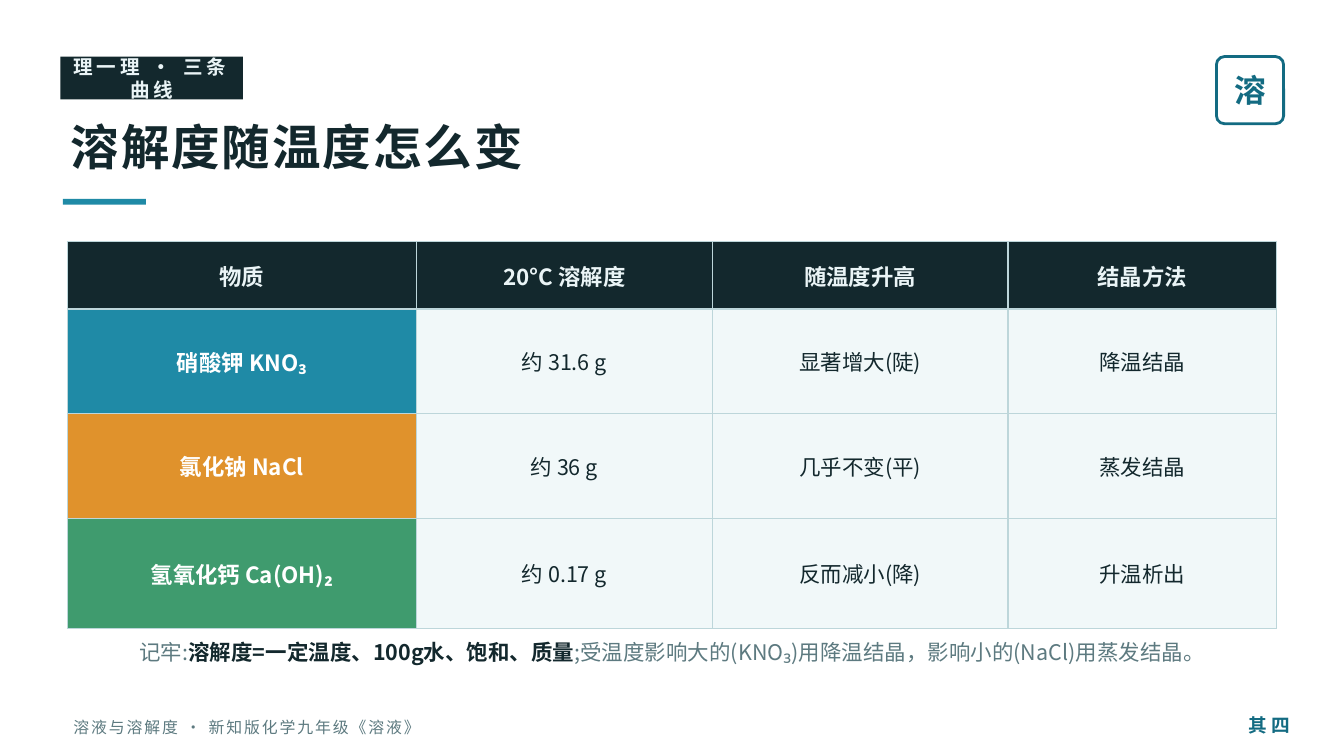
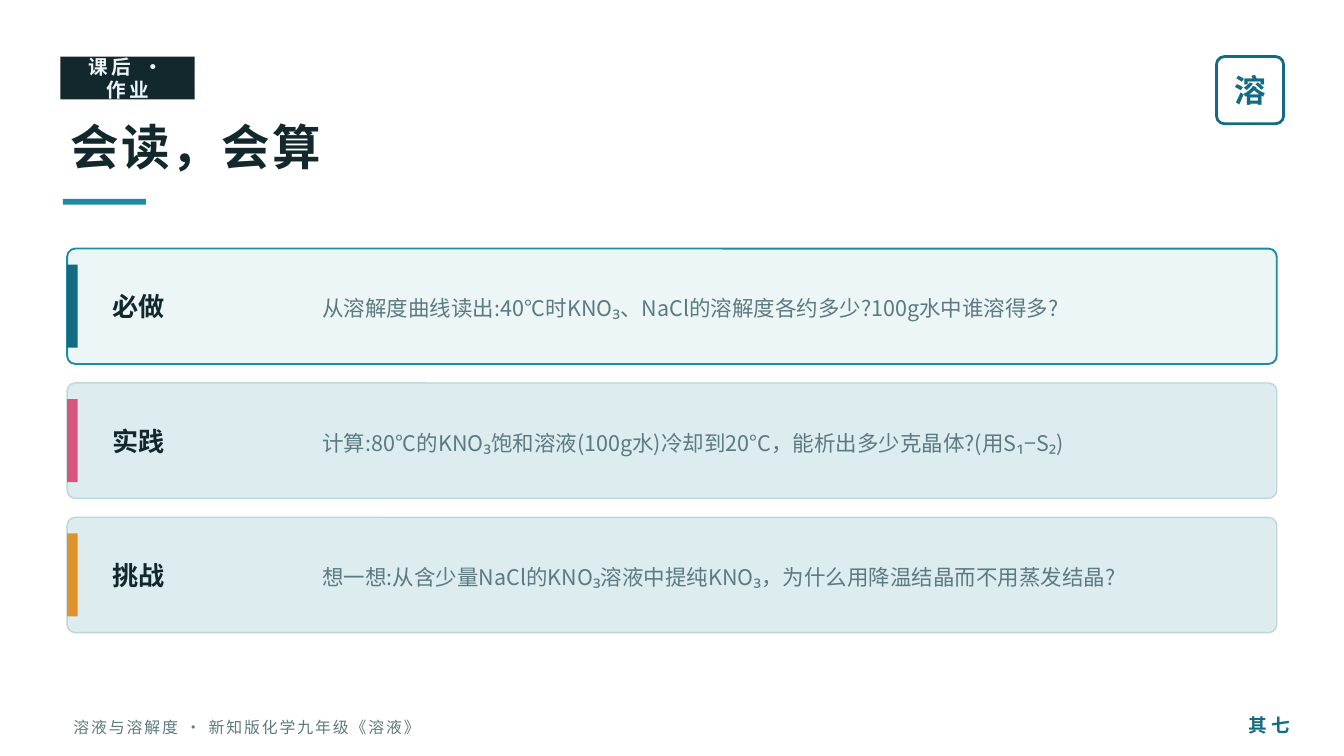
from lxml import etree
from pptx import Presentation
from pptx.dml.color import RGBColor
from pptx.enum.shapes import MSO_SHAPE
from pptx.enum.text import MSO_ANCHOR, PP_ALIGN
from pptx.oxml.ns import qn
from pptx.util import Cm, Pt

RECT, ROUND = MSO_SHAPE.RECTANGLE, MSO_SHAPE.ROUNDED_RECTANGLE
LEFT, CENTER, RIGHT = PP_ALIGN.LEFT, PP_ALIGN.CENTER, PP_ALIGN.RIGHT
MIDDLE = MSO_ANCHOR.MIDDLE

FONT = "Noto Sans CJK SC"
COLORS = {
    "ink": "13282D", "muted": "5D7A80", "pale": "EAF4F6", "white": "FFFFFF",
    "deep": "136B82", "teal": "1F8AA6", "orange": "E0922C", "green": "3F9B6E",
    "pink": "D6557F", "border": "BDD6DA", "cell": "F1F8F9",
    "card": "DCECEF", "card_first": "ECF6F7",
}

# Content
SEAL = "溶"
FOOTER = "溶液与溶解度 · 新知版化学九年级《溶液》"

CURVES = {"tag": "理一理 · 三条曲线", "tag_width": 3.45,
          "title": "溶解度随温度怎么变", "page": "其 四"}
TABLE_HEAD = ["物质", "20°C 溶解度", "随温度升高", "结晶方法"]
TABLE_ROWS = [
    ("teal", ["硝酸钾 KNO₃", "约 31.6 g", "显著增大(陡)", "降温结晶"]),
    ("orange", ["氯化钠 NaCl", "约 36 g", "几乎不变(平)", "蒸发结晶"]),
    ("green", ["氢氧化钙 Ca(OH)₂", "约 0.17 g", "反而减小(降)", "升温析出"]),
]
COL_WIDTHS = [6.6, 5.59, 5.59, 5.08]
ROW_HEIGHTS = [1.27, 1.98, 1.98, 2.08]
REMINDER = [
    ("记牢:", "muted", False),
    ("溶解度=一定温度、100g水、饱和、质量", "ink", True),
    (";受温度影响大的(KNO₃)用降温结晶，影响小的(NaCl)用蒸发结晶。", "muted", False),
]

HOMEWORK = {"tag": "课后 · 作业", "tag_width": 2.54,
            "title": "会读，会算", "page": "其 七"}
TASKS = [
    ("必做", "deep", "从溶解度曲线读出:40°C时KNO₃、NaCl的溶解度各约多少?100g水中谁溶得多?"),
    ("实践", "pink", "计算:80°C的KNO₃饱和溶液(100g水)冷却到20°C，能析出多少克晶体?(用S₁−S₂)"),
    ("挑战", "orange", "想一想:从含少量NaCl的KNO₃溶液中提纯KNO₃，为什么用降温结晶而不用蒸发结晶?"),
]

# Layout in centimetres
SLIDE_W, SLIDE_H = 25.4, 14.29
BODY_X, BODY_W = 1.27, 22.86
TABLE_Y = 4.57
CARD_Y, CARD_H, CARD_STEP = 4.7, 2.18, 2.54


def color(key):
    return RGBColor.from_string(COLORS[key])


def format_paragraph(p, size, ink=None, bold=None, align=LEFT, spacing=0):
    """Set the paragraph's font, for East Asian text too; spacing is in points."""
    p.alignment = align
    font = p.font
    font.name, font.size, font.bold = FONT, Pt(size), bold
    if ink:
        font.color.rgb = color(ink)
    props = p._p.pPr.find(qn("a:defRPr"))
    etree.SubElement(props, qn("a:ea"), typeface=FONT)
    if spacing:
        props.set("spc", str(spacing * 100))


def write(frame, text, size, ink, **style):
    frame.word_wrap = True
    frame.vertical_anchor = MIDDLE
    p = frame.paragraphs[0]
    p.text = text
    format_paragraph(p, size, ink, **style)
    return p


def add_text(slide, box, text, size, ink, **style):
    tb = slide.shapes.add_textbox(*map(Cm, box))
    return write(tb.text_frame, text, size, ink, **style)


def add_block(slide, box, kind=RECT, fill=None, line=None, width=1, radius=0):
    sp = slide.shapes.add_shape(kind, *map(Cm, box))
    sp.shadow.inherit = False
    if kind == ROUND:
        sp.adjustments[0] = radius
    if fill:
        sp.fill.solid()
        sp.fill.fore_color.rgb = color(fill)
    else:
        sp.fill.background()
    if line:
        sp.line.color.rgb = color(line)
        sp.line.width = Pt(width)
    else:
        sp.line.fill.background()
    return sp


def add_page(prs, tag, tag_width, title, page):
    """Add a slide with the shared heading, seal and footer."""
    slide = prs.slides.add_slide(prs.slide_layouts[6])
    slide.background.fill.solid()
    slide.background.fill.fore_color.rgb = color("white")
    label = add_block(slide, (1.14, 1.07, tag_width, 0.81), fill="ink")
    write(label.text_frame, tag, 10.5, "pale", bold=True, align=CENTER, spacing=2)
    add_text(slide, (1.09, 1.98, BODY_W, 1.57), title, 26, "ink", bold=True, spacing=1)
    add_block(slide, (1.19, 3.76, 1.57, 0.11), fill="teal")
    seal = add_block(slide, (22.99, 1.07, 1.27, 1.27), ROUND,
                     line="deep", width=1.5, radius=0.12)
    write(seal.text_frame, SEAL, 17, "deep", bold=True, align=CENTER)
    add_text(slide, (1.14, 13.36, 16.76, 0.76), FOOTER, 8.5, "muted", spacing=1)
    add_text(slide, (23.11, 13.31, 1.52, 0.81), page, 10, "deep", bold=True, align=RIGHT)
    return slide


def style_cell(cell, text, fill, size, ink, bold):
    write(cell.text_frame, text, size, ink, bold=bold, align=CENTER)
    cell.vertical_anchor = MIDDLE
    cell.fill.solid()
    cell.fill.fore_color.rgb = color(fill)
    props = cell._tc.get_or_add_tcPr()
    for i, side in enumerate(("lnL", "lnR", "lnT", "lnB")):
        ln = etree.Element(qn(f"a:{side}"), w=str(Pt(0.75)))
        solid = etree.SubElement(ln, qn("a:solidFill"))
        etree.SubElement(solid, qn("a:srgbClr"), val=COLORS["border"])
        props.insert(i, ln)


def add_solubility_table(slide):
    frame = slide.shapes.add_table(
        len(ROW_HEIGHTS), len(COL_WIDTHS), Cm(BODY_X), Cm(TABLE_Y),
        Cm(BODY_W), Cm(sum(ROW_HEIGHTS)))
    table = frame.table
    table.horz_banding = False
    for col, width in zip(table.columns, COL_WIDTHS):
        col.width = Cm(width)
    for row, height in zip(table.rows, ROW_HEIGHTS):
        row.height = Cm(height)
    for c, text in enumerate(TABLE_HEAD):
        style_cell(table.cell(0, c), text, "ink", 12, "pale", True)
    for r, (fill, texts) in enumerate(TABLE_ROWS, 1):
        style_cell(table.cell(r, 0), texts[0], fill, 12, "white", True)
        for c, text in enumerate(texts[1:], 1):
            style_cell(table.cell(r, c), text, "cell", 11.5, "ink", False)


def add_reminder(slide):
    tb = slide.shapes.add_textbox(*map(Cm, (BODY_X, 11.68, BODY_W, 1.27)))
    tf = tb.text_frame
    tf.word_wrap = True
    tf.vertical_anchor = MIDDLE
    p = tf.paragraphs[0]
    format_paragraph(p, 11.5, align=CENTER)
    for text, ink, bold in REMINDER:
        r = p.add_run()
        r.text = text
        r.font.bold = bold
        r.font.color.rgb = color(ink)


def add_task_card(slide, index, name, accent, task):
    y = CARD_Y + index * CARD_STEP

    def centred(x, width, height):
        return x, y + (CARD_H - height) / 2, width, height

    first = index == 0
    add_block(slide, (BODY_X, y, BODY_W, CARD_H), ROUND, radius=0.07,
              fill="card_first" if first else "card",
              line="teal" if first else "border", width=1 if first else 0.75)
    add_block(slide, centred(BODY_X, 0.2, 1.57), fill=accent)
    add_text(slide, centred(1.88, 3.56, 1.68), name, 14, "ink", bold=True)
    p = add_text(slide, centred(5.84, 17.78, 1.78), task, 11.5, "muted")
    p.line_spacing = Pt(16)


def main():
    prs = Presentation()
    prs.slide_width, prs.slide_height = Cm(SLIDE_W), Cm(SLIDE_H)

    curves = add_page(prs, **CURVES)
    add_solubility_table(curves)
    add_reminder(curves)

    homework = add_page(prs, **HOMEWORK)
    for i, task in enumerate(TASKS):
        add_task_card(homework, i, *task)

    prs.save("out.pptx")


if __name__ == "__main__":
    main()
